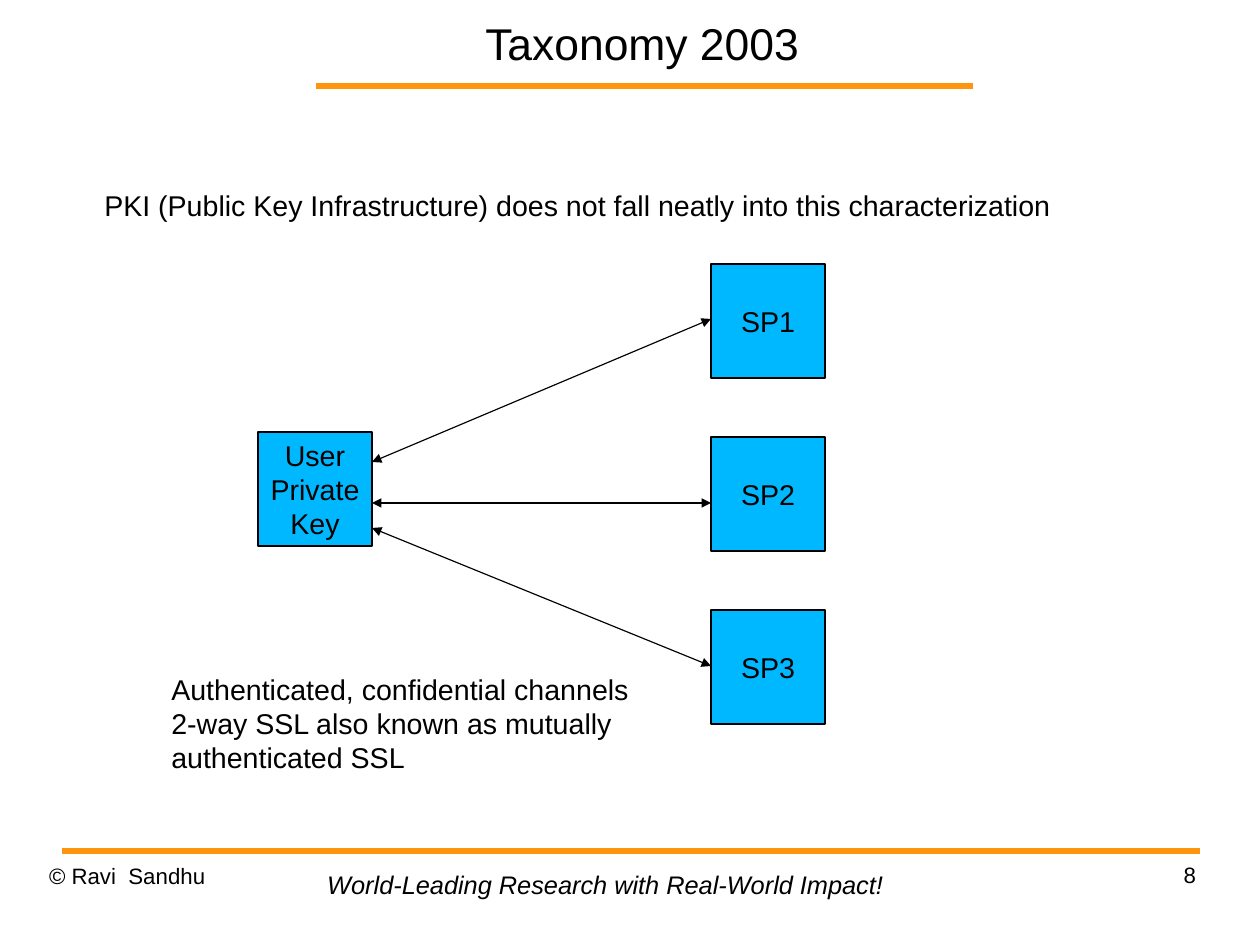
"""Build the slide on how PKI fits the 2003 taxonomy."""
from lxml import etree
from pptx import Presentation
from pptx.dml.color import RGBColor
from pptx.enum.shapes import MSO_CONNECTOR, MSO_SHAPE
from pptx.enum.text import MSO_ANCHOR, MSO_AUTO_SIZE, PP_ALIGN
from pptx.oxml.ns import qn
from pptx.util import Pt

LEFT, CENTER, RIGHT = PP_ALIGN.LEFT, PP_ALIGN.CENTER, PP_ALIGN.RIGHT
TOP, MIDDLE = MSO_ANCHOR.TOP, MSO_ANCHOR.MIDDLE
STRAIGHT, RECTANGLE = MSO_CONNECTOR.STRAIGHT, MSO_SHAPE.RECTANGLE
NO_FIT = MSO_AUTO_SIZE.NONE

PX = 8000
SLIDE_WIDTH, SLIDE_HEIGHT = 1260, 945
FONT = "Arial"
COLORS = {"ink": "000000", "rule": "FF950E", "box": "00B8FF"}

TITLE = "Taxonomy 2003"
CLAIM = "PKI (Public Key Infrastructure) does not fall neatly into this characterization"
USER = "User\nPrivate\nKey"
PROVIDERS = ["SP1", "SP2", "SP3"]
CHANNELS = ("Authenticated, confidential channels\n"
            "2-way SSL also known as mutually authenticated SSL")
COPYRIGHT = "© Ravi  Sandhu"
MOTTO = "World-Leading Research with Real-World Impact!"
PAGE = "8"

BOX = 114
USER_LEFT, USER_TOP = 258, 432
PROVIDER_LEFT, PROVIDER_TOP, PROVIDER_STEP = 711, 264, 173
CHANNEL_ENDS = [(462, 319), (503, 503), (528, 666)]
RULES = [(316, 973, 86), (62, 1200, 851)]


def color(name):
    return RGBColor.from_string(COLORS[name])


def emu(*lengths):
    return [length * PX for length in lengths]


def write(shape, text, size=18, align=LEFT, anchor=TOP, italic=False,
          wrap=True, inset=True, spacing=None):
    frame = shape.text_frame
    frame.text = text
    frame.word_wrap = wrap
    frame.auto_size = NO_FIT
    frame.vertical_anchor = anchor
    if not inset:
        frame.margin_left = frame.margin_right = 0
        frame.margin_top = frame.margin_bottom = 0
    for paragraph in frame.paragraphs:
        paragraph.alignment = align
        if spacing:
            paragraph.line_spacing = spacing
        paragraph.font.name = FONT
        paragraph.font.size = Pt(size)
        paragraph.font.italic = italic
        paragraph.font.color.rgb = color("ink")


def add_text(slide, place, text, **style):
    write(slide.shapes.add_textbox(*emu(*place)), text, **style)


def add_box(slide, left, top, text):
    box = slide.shapes.add_shape(RECTANGLE, *emu(left, top, BOX, BOX))
    box.shadow.inherit = False
    box.fill.solid()
    box.fill.fore_color.rgb = color("box")
    box.line.color.rgb = color("ink")
    box.line.width = Pt(0.75)
    write(box, text, align=CENTER, anchor=MIDDLE)


def add_line(slide, ends, name, width, arrows=False):
    line = slide.shapes.add_connector(STRAIGHT, *emu(*ends))
    line.line.color.rgb = color(name)
    line.line.width = Pt(width)
    if arrows:
        stroke = line.line._get_or_add_ln()
        for end in ("a:headEnd", "a:tailEnd"):
            etree.SubElement(stroke, qn(end), type="triangle")
    etree.SubElement(line._element.spPr, qn("a:effectLst"))


def main():
    deck = Presentation()
    deck.slide_width = SLIDE_WIDTH * PX
    deck.slide_height = SLIDE_HEIGHT * PX
    slide = deck.slides.add_slide(deck.slide_layouts[5])

    for start, end, height in RULES:
        add_line(slide, (start, height, end, height), "rule", 4.31)

    title = slide.shapes.title
    title.left, title.top, title.width, title.height = emu(275, 0, 734, 86)
    write(title, TITLE, size=28, align=CENTER, anchor=MIDDLE, inset=False)

    add_text(slide, (49, 862, 294, 65), COPYRIGHT, size=14, inset=False, spacing=1.01)
    add_text(slide, (902, 861, 294, 65), PAGE, size=14, align=RIGHT,
             inset=False, spacing=1.01)
    add_text(slide, (316, 863, 581, 42), MOTTO, size=16, italic=True, wrap=False)
    add_text(slide, (93, 182, 978, 46), CLAIM, wrap=False)

    add_box(slide, USER_LEFT, USER_TOP, USER)
    for row, provider in enumerate(PROVIDERS):
        add_box(slide, PROVIDER_LEFT, PROVIDER_TOP + row * PROVIDER_STEP, provider)
    for user_end, provider_end in CHANNEL_ENDS:
        ends = (USER_LEFT + BOX, user_end, PROVIDER_LEFT, provider_end)
        add_line(slide, ends, "ink", 0.75, arrows=True)

    add_text(slide, (160, 666, 501, 115), CHANNELS)
    deck.save("out.pptx")


if __name__ == "__main__":
    main()
